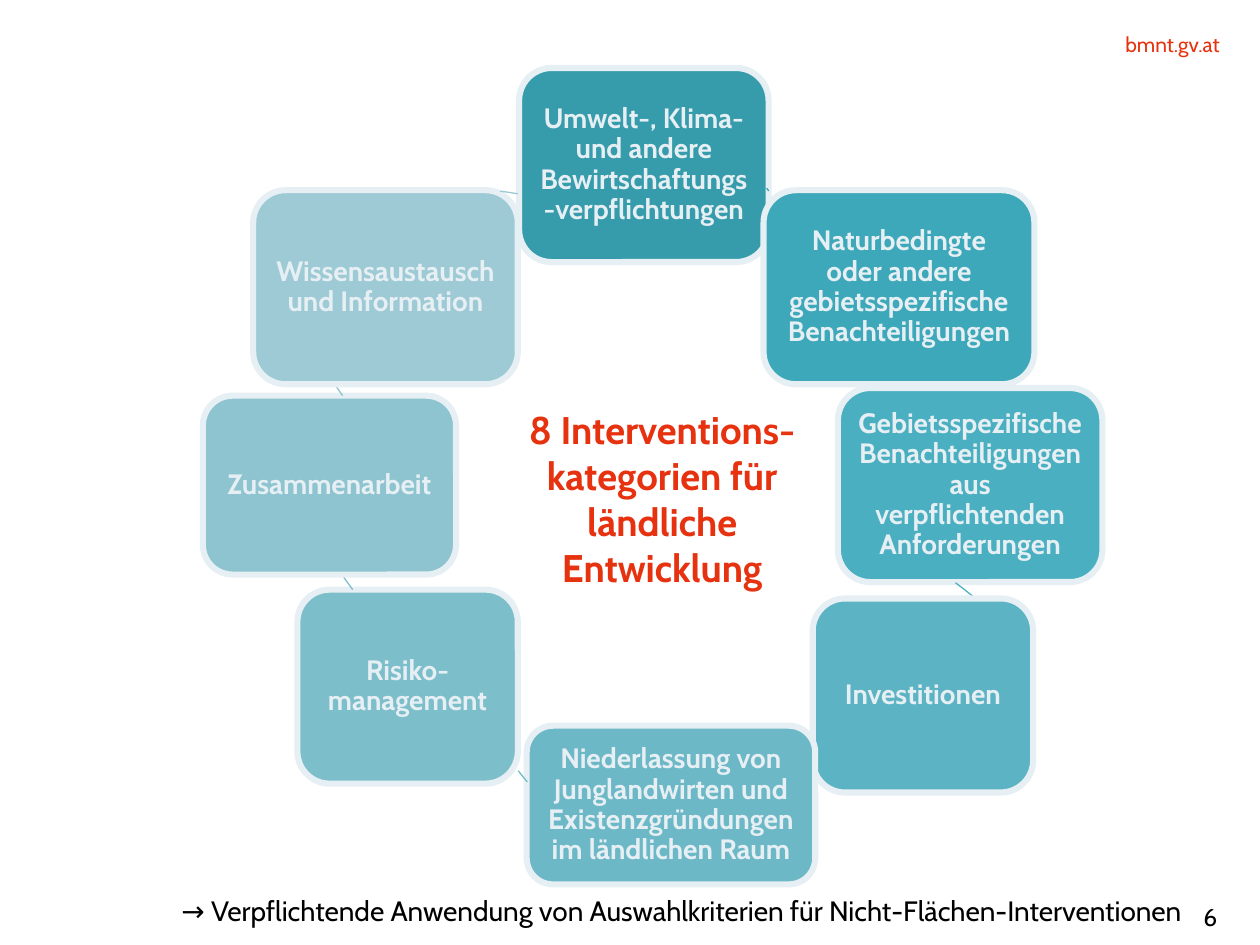
from math import atan2, degrees

from pptx import Presentation
from pptx.dml.color import RGBColor
from pptx.enum.shapes import MSO_SHAPE
from pptx.enum.text import MSO_ANCHOR, PP_ALIGN
from pptx.util import Pt

PX = 9144  # 100 px to the inch
FONT = "Cabin"
RED = RGBColor(0xE6, 0x32, 0x0F)
BLACK = RGBColor(0x00, 0x00, 0x00)
PALE = RGBColor(0xE6, 0xEF, 0xF3)
CIRCLE = 508  # diameter of the circle that each link is a part of
ARC_UNIT = 0.6  # one degree as an arc adjustment

# Clockwise from the top: text, place, fill, then the arc to the next category:
# left and top of its circle, ends (x1, y1, x2, y2), colour
CATEGORIES = [
    ("Umwelt-, Klima- und andere Bewirtschaftungs-verpflichtungen",
     (412, 54, 198, 154), RGBColor(0x36, 0x9C, 0xAC),
     (150, 46), (609, 149, 611, 151), RGBColor(0x38, 0xA4, 0xB5)),
    ("Naturbedingte oder andere gebietsspezifische Benachteiligungen",
     (606, 151, 215, 154), RGBColor(0x3D, 0xA8, 0xBA),
     (309, 218), (755, 306, 758, 308), RGBColor(0x40, 0xAE, 0xC1)),
    ("Gebietsspezifische Benachteiligungen aus verpflichtenden Anforderungen",
     (665, 308, 210, 154), RGBColor(0x4A, 0xAF, 0xC1),
     (355, 414), (758, 463, 774, 475), RGBColor(0x50, 0xB2, 0xC3)),
    ("Investitionen",
     (645, 475, 175, 154), RGBColor(0x5C, 0xB3, 0xC4),
     (644, 386), (645, 626, 647, 604), RGBColor(0x60, 0xB6, 0xC6)),
    ("Niederlassung von Junglandwirten und Existenzgründungen im ländlichen Raum",
     (418, 576, 229, 126), RGBColor(0x6D, 0xB8, 0xC7),
     (358, 202), (418, 621, 411, 612), RGBColor(0x70, 0xBA, 0xC9)),
    ("Risiko-management",
     (236, 468, 175, 154), RGBColor(0x7D, 0xBE, 0xCB),
     (228, 60), (280, 468, 272, 457), RGBColor(0x7F, 0xBF, 0xCC)),
    ("Zusammenarbeit",
     (161, 314, 201, 142), RGBColor(0x8D, 0xC4, 0xD0),
     (225, -87), (272, 314, 266, 306), RGBColor(0x8E, 0xC4, 0xD0)),
    ("Wissensaustausch und Information",
     (201, 151, 210, 154), RGBColor(0x9D, 0xCA, 0xD4),
     (113, 150), (397, 151, 411, 154), RGBColor(0x9C, 0xCA, 0xD4)),
]

# Text, place, side margin, top margin, size, colour, bold, alignment, line spacing
TEXTS = [
    ("bmnt.gv.at", (727, 25, 241, 20), 0, 0, 12, RED, False, PP_ALIGN.RIGHT, None),
    ("8 Interventions-kategorien für ländliche Entwicklung",
     (386, 317, 279, 158), 10, 5, 22, RED, True, PP_ALIGN.CENTER, None),
    ("6", (887, 711, 89, 29), 10, 5, 14, BLACK, False, PP_ALIGN.RIGHT, None),
    ("→ Verpflichtende Anwendung von Auswahlkriterien für Nicht-Flächen-Interventionen",
     (104, 707, 842, 38), (40, 0), 0, 16, BLACK, False, PP_ALIGN.LEFT, Pt(21)),
]


def scaled(lengths):
    return [length * PX for length in lengths]


def write(shape, text, side, top, size, color, bold, alignment, spacing):
    """Fill a shape with one wrapped paragraph; side is one margin or (left, right)."""
    frame = shape.text_frame
    frame.word_wrap = True
    sides = side if isinstance(side, tuple) else (side, side)
    frame.margin_left, frame.margin_right = scaled(sides)
    frame.margin_top = frame.margin_bottom = top * PX
    para = frame.paragraphs[0]
    para.text = text
    para.alignment = alignment
    para.line_spacing = spacing
    para.font.name = FONT
    para.font.size = Pt(size)
    para.font.bold = bold
    para.font.color.rgb = color


deck = Presentation()
deck.slide_width, deck.slide_height = scaled((1000, 750))
page = deck.slides.add_slide(deck.slide_layouts[6])

for text, place, fill, (left, top), (x1, y1, x2, y2), link_color in CATEGORIES:
    box = page.shapes.add_shape(MSO_SHAPE.ROUNDED_RECTANGLE, *scaled(place))
    box.shadow.inherit = False
    box.fill.solid()
    box.fill.fore_color.rgb = fill
    box.line.color.rgb = PALE
    box.line.width = Pt(3.5)
    write(box, text, 7, 7, 16, PALE, True, PP_ALIGN.CENTER, 0.9)
    box.text_frame.vertical_anchor = MSO_ANCHOR.MIDDLE

    link = page.shapes.add_shape(MSO_SHAPE.ARC, *scaled((left, top, CIRCLE, CIRCLE)))
    link.shadow.inherit = False
    link.fill.background()
    link.line.color.rgb = link_color
    link.line.width = Pt(0.75)
    center_x, center_y = left + CIRCLE / 2, top + CIRCLE / 2
    for index, (x, y) in enumerate([(x1, y1), (x2, y2)]):
        angle = degrees(atan2(y - center_y, x - center_x)) % 360
        link.adjustments[index] = angle * ARC_UNIT

for text, place, *style in TEXTS:
    write(page.shapes.add_textbox(*scaled(place)), text, *style)

deck.save("out.pptx")
